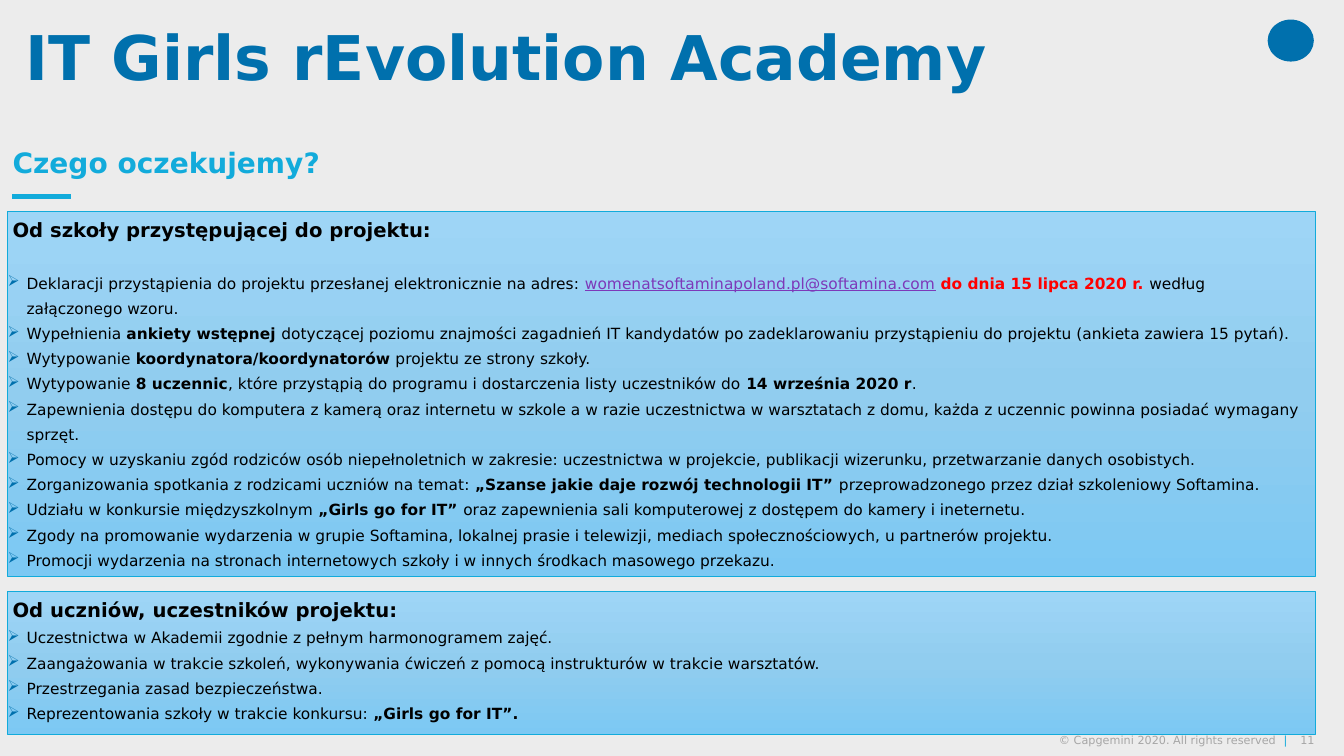
from lxml import etree
from copy import deepcopy
from pptx import Presentation
from pptx.dml.color import RGBColor
from pptx.enum.shapes import MSO_CONNECTOR, MSO_SHAPE
from pptx.enum.text import MSO_ANCHOR, PP_ALIGN
from pptx.oxml.ns import qn
from pptx.util import Pt

RECT, OVAL = MSO_SHAPE.RECTANGLE, MSO_SHAPE.OVAL
LINE = MSO_CONNECTOR.STRAIGHT
TOP, MIDDLE = MSO_ANCHOR.TOP, MSO_ANCHOR.MIDDLE
LEFT, RIGHT = PP_ALIGN.LEFT, PP_ALIGN.RIGHT
FONT = "DejaVu Sans"
BLUE, CYAN, GREY, BLACK = "0070AD", "12ABDB", "A6A6A6", "000000"
MAIL = "womenatsoftaminapoland.pl@softamina.com"
DATE = "do dnia 15 lipca 2020 r. "
TONES = {MAIL: "7D39B9", DATE: "FF0000"}
STOPS = [(0, "9ED5F6"), (0.5, "91CDEF"), (1, "7CC8F3")]

# Asterisks enclose the marked words of a bullet
PANELS = [
    (151.2, 260.6, 18, "Od szkoły przystępującej do projektu:", [
        "Deklaracji przystąpienia do projektu przesłanej elektronicznie na adres: "
        f"*{MAIL}* *{DATE}*według załączonego wzoru.",
        "Wypełnienia *ankiety wstępnej *dotyczącej poziomu znajmości zagadnień IT kandydatów "
        "po zadeklarowaniu przystąpieniu do projektu (ankieta zawiera 15 pytań).",
        "Wytypowanie *koordynatora/koordynatorów* projektu ze strony szkoły.",
        "Wytypowanie *8 uczennic*, które przystąpią do programu i dostarczenia listy "
        "uczestników do *14 września 2020 r*.",
        "Zapewnienia dostępu do komputera z kamerą oraz internetu w szkole a w razie uczestnictwa "
        "w warsztatach z domu, każda z uczennic powinna posiadać wymagany sprzęt.",
        "Pomocy w uzyskaniu zgód rodziców osób niepełnoletnich w zakresie: uczestnictwa "
        "w projekcie, publikacji wizerunku, przetwarzanie danych osobistych.",
        "Zorganizowania spotkania z rodzicami uczniów na temat: *„Szanse jakie daje rozwój "
        "technologii IT” *przeprowadzonego przez dział szkoleniowy Softamina.",
        "Udziału w konkursie międzyszkolnym *„Girls go for IT” *oraz zapewnienia sali "
        "komputerowej z dostępem do kamery i ineternetu.",
        "Zgody na promowanie wydarzenia w grupie Softamina, lokalnej prasie i telewizji, "
        "mediach społecznościowych, u partnerów projektu.",
        "Promocji wydarzenia na stronach internetowych szkoły i w innych środkach "
        "masowego przekazu.",
    ]),
    (422.6, 102.3, 0, "Od uczniów, uczestników projektu:", [
        "Uczestnictwa w Akademii zgodnie z pełnym harmonogramem zajęć.",
        "Zaangażowania w trakcie szkoleń, wykonywania ćwiczeń z pomocą instrukturów "
        "w trakcie warsztatów.",
        "Przestrzegania zasad bezpieczeństwa.",
        "Reprezentowania szkoły w trakcie konkursu: *„Girls go for IT”.*",
    ]),
]


def rgb(tone):
    return RGBColor.from_string(tone)


def write(shape, parts, size, bold=False, align=LEFT, anchor=MIDDLE, pad=(0, 0, 0, 0)):
    """Set one paragraph of (text, colour) parts in a shape."""
    frame = shape.text_frame
    frame.word_wrap = True
    frame.vertical_anchor = anchor
    frame.margin_left, frame.margin_top, frame.margin_right, frame.margin_bottom = map(Pt, pad)
    para = frame.paragraphs[0]
    para.alignment = align
    for text, tone in parts:
        run = para.add_run()
        run.text = text
        run.font.name, run.font.size, run.font.bold = FONT, Pt(size), bold
        run.font.color.rgb = rgb(tone)
    return para


prs = Presentation()
prs.slide_width, prs.slide_height = Pt(960), Pt(540)
slide = prs.slides.add_slide(prs.slide_layouts[5])
slide.background.fill.solid()
slide.background.fill.fore_color.rgb = rgb("ECECEC")
shapes = slide.shapes

# Title
title = shapes.title
title.left, title.top, title.width, title.height = Pt(18), Pt(0), Pt(876), Pt(87)
write(title, [("IT Girls rEvolution Academy", BLUE)], 44, True).line_spacing = 0.9

# Corner mark
mark = shapes.add_shape(OVAL, Pt(905.5), Pt(14), Pt(33), Pt(30))
mark.shadow.inherit = False
mark.fill.solid()
mark.fill.fore_color.rgb = rgb(BLUE)
mark.line.fill.background()

# Footer
number = shapes.add_textbox(Pt(925), Pt(523.5), Pt(14), Pt(9.5))
write(number, [("11", GREY)], 8, align=RIGHT)
footer = shapes.add_textbox(Pt(710), Pt(523.5), Pt(209.5), Pt(9.5))
write(footer, [("© Capgemini 2020. All rights reserved  ", GREY), ("|", CYAN)], 8, align=RIGHT)

# Subtitle and its rule
sub = shapes.add_textbox(Pt(9), Pt(92.5), Pt(790), Pt(47.5))
write(sub, [("Czego oczekujemy?", CYAN)], 20, True, pad=(0, 3.6, 7.2, 3.6))
rule = shapes.add_connector(LINE, Pt(8.6), Pt(140.4), Pt(51), Pt(140.4))
rule.line.color.rgb = rgb(CYAN)
rule.line.width = Pt(3.75)
etree.SubElement(rule.element.spPr, qn("a:effectLst"))

# Panels of expectations
for top, height, gap, head, points in PANELS:
    panel = shapes.add_shape(RECT, Pt(5.5), Pt(top), Pt(933.8), Pt(height))
    panel.shadow.inherit = False
    panel.line.color.rgb = rgb(CYAN)
    panel.line.width = Pt(0.5)
    panel.fill.gradient()
    panel.fill.gradient_angle = 270
    stops = panel.element.spPr.find(".//" + qn("a:gsLst"))
    stops.insert(1, deepcopy(stops[0]))
    for stop, (place, tone) in zip(panel.fill.gradient_stops, STOPS):
        stop.position = place
        stop.color.rgb = rgb(tone)

    para = write(panel, [(head, BLACK)], 14, True, anchor=TOP, pad=(0, 3.6, 7.2, 3.6))
    para.line_spacing = Pt(18)
    para._p.get_or_add_pPr().set("marL", str(Pt(3.5)))

    for row, point in enumerate(points):
        para = panel.text_frame.add_paragraph()
        props = para._p.get_or_add_pPr()
        props.set("marL", str(Pt(13.5)))
        props.set("indent", str(Pt(-13.5)))
        tint = etree.SubElement(props, qn("a:buClr"))
        etree.SubElement(tint, qn("a:srgbClr"), val=BLUE)
        etree.SubElement(props, qn("a:buChar"), char="➢")
        para.alignment = LEFT
        para.line_spacing = Pt(18)
        para.space_before = Pt(0 if row else gap)
        for part, text in enumerate(point.split("*")):
            if text:
                run = para.add_run()
                run.text = text
                run.font.name, run.font.size = FONT, Pt(11)
                run.font.bold = part % 2 == 1 and text != MAIL
                run.font.underline = text == MAIL
                run.font.color.rgb = rgb(TONES.get(text, BLACK))

prs.save("out.pptx")
